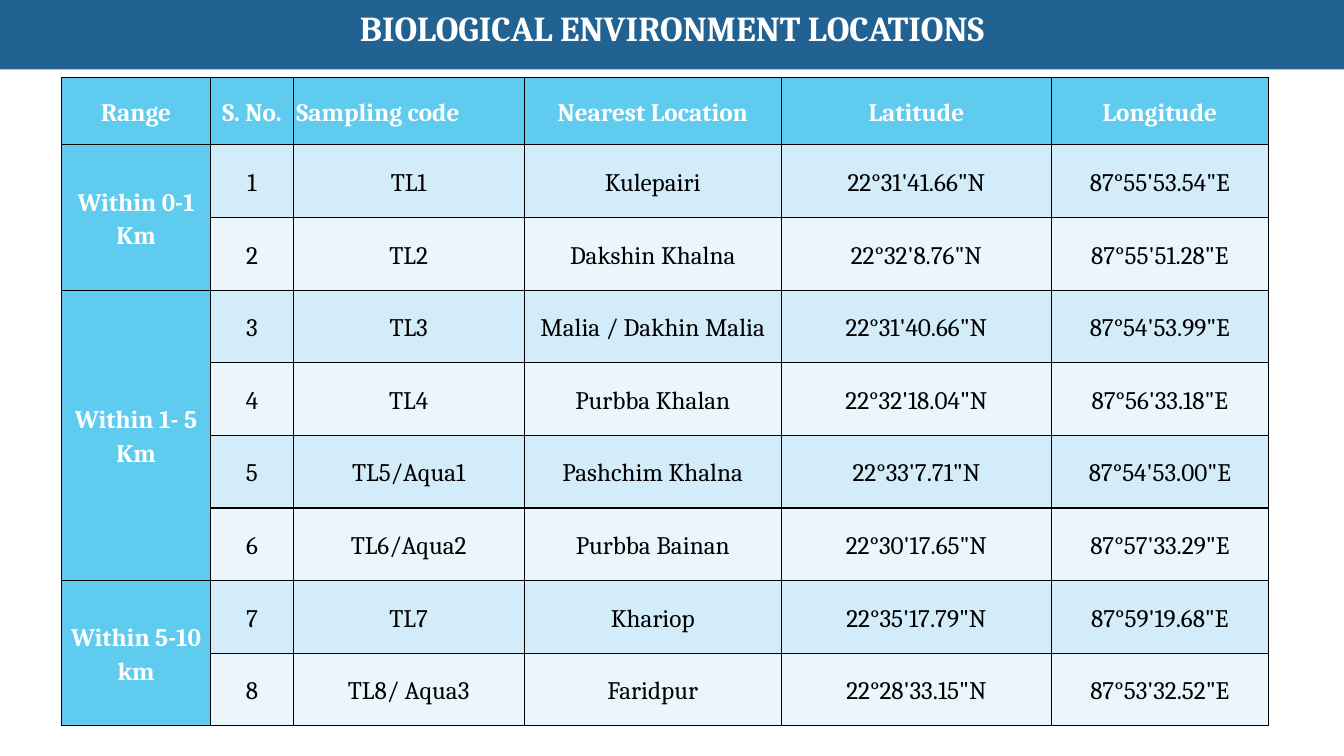
from lxml import etree
from pptx import Presentation
from pptx import util as u
from pptx.dml.color import RGBColor
from pptx.enum import text
from pptx.oxml.ns import qn

COLOURS = {
    "banner": "226292",
    "heading": "5FCBEF",
    "odd": "D2ECF9",
    "even": "EAF6FC",
    "light": "FFFFFF",
    "dark": "000000",
}

HEADINGS = ["Range", "S. No.", "Sampling code", "Nearest Location", "Latitude", "Longitude"]
COLUMN_WIDTHS = [3.76, 2.08, 5.82, 6.48, 6.81, 5.46]
HEADING_HEIGHT, ROW_HEIGHT = 1.69, 1.83

# Each range with its sampling locations
RANGES = [
    ("Within 0-1 Km", [
        ("TL1", "Kulepairi", "22°31'41.66\"N", "87°55'53.54\"E"),
        ("TL2", "Dakshin Khalna", "22°32'8.76\"N", "87°55'51.28\"E"),
    ]),
    ("Within 1- 5 Km", [
        ("TL3", "Malia / Dakhin Malia", "22°31'40.66\"N", "87°54'53.99\"E"),
        ("TL4", "Purbba Khalan", "22°32'18.04\"N", "87°56'33.18\"E"),
        ("TL5/Aqua1", "Pashchim Khalna", "22°33'7.71\"N", "87°54'53.00\"E"),
        ("TL6/Aqua2", "Purbba Bainan", "22°30'17.65\"N", "87°57'33.29\"E"),
    ]),
    ("Within 5-10 km", [
        ("TL7", "Khariop", "22°35'17.79\"N", "87°59'19.68\"E"),
        ("TL8/ Aqua3", "Faridpur", "22°28'33.15\"N", "87°53'32.52\"E"),
    ]),
]


class SlideBuilder:
    font_name = "Cambria"
    title_size = 25
    table_size = 18

    def __init__(self, presentation):
        self.slide = presentation.slides.add_slide(presentation.slide_layouts[5])

    def colour(self, name):
        return RGBColor.from_string(COLOURS[name])

    def add_run(self, paragraph, words, size, colour, bold):
        run = paragraph.add_run()
        run.text = words
        run.font.name = self.font_name
        run.font.size = u.Pt(size)
        run.font.bold = bold
        run.font.color.rgb = self.colour(colour)

    def title(self, words, left, top, width, height):
        shape = self.slide.shapes.title
        shape.left, shape.top = u.Cm(left), u.Cm(top)
        shape.width, shape.height = u.Cm(width), u.Cm(height)
        shape.fill.solid()
        shape.fill.fore_color.rgb = self.colour("banner")
        frame = shape.text_frame
        frame.auto_size = text.MSO_AUTO_SIZE.SHAPE_TO_FIT_TEXT
        frame.vertical_anchor = text.MSO_ANCHOR.MIDDLE
        paragraph = frame.paragraphs[0]
        paragraph.alignment = text.PP_ALIGN.CENTER
        self.add_run(paragraph, words, self.title_size, "light", True)

    def table(self, left, top, widths, heights):
        frame = self.slide.shapes.add_table(
            len(heights), len(widths), u.Cm(left), u.Cm(top),
            u.Cm(sum(widths)), u.Cm(sum(heights)))
        table = frame.table
        for column, width in zip(table.columns, widths):
            column.width = u.Cm(width)
        for row, height in zip(table.rows, heights):
            row.height = u.Cm(height)
        for cell in table.iter_cells():
            self.borders(cell)
        return table

    def borders(self, cell):
        properties = cell._tc.get_or_add_tcPr()
        for side in ("a:lnL", "a:lnR", "a:lnT", "a:lnB"):
            line = etree.SubElement(properties, qn(side), w=str(u.Pt(1)))
            fill = etree.SubElement(line, qn("a:solidFill"))
            etree.SubElement(fill, qn("a:srgbClr"), val=COLOURS["dark"])

    def cell(self, cell, words, fill, alignment=text.PP_ALIGN.CENTER):
        heading = fill == "heading"
        cell.fill.solid()
        cell.fill.fore_color.rgb = self.colour(fill)
        cell.vertical_anchor = text.MSO_ANCHOR.MIDDLE
        cell.margin_left = cell.margin_right = u.Cm(0.08)
        cell.margin_top = cell.margin_bottom = 0
        paragraph = cell.text_frame.paragraphs[0]
        paragraph.alignment = alignment
        paragraph.line_spacing = 1.15
        self.add_run(paragraph, words, self.table_size,
                     "light" if heading else "dark", heading)


def main():
    presentation = Presentation()
    presentation.slide_width, presentation.slide_height = u.Cm(33.87), u.Cm(19.05)
    builder = SlideBuilder(presentation)

    # Title banner
    builder.title("BIOLOGICAL ENVIRONMENT LOCATIONS", 0, 0.03, 33.87, 1.32)

    # Table grid and headings
    location_count = sum(len(locations) for _, locations in RANGES)
    heights = [HEADING_HEIGHT] + [ROW_HEIGHT] * location_count
    table = builder.table(1.55, 1.96, COLUMN_WIDTHS, heights)
    for column, heading in enumerate(HEADINGS):
        left_aligned = heading == "Sampling code"
        builder.cell(table.cell(0, column), heading, "heading",
                     text.PP_ALIGN.LEFT if left_aligned else text.PP_ALIGN.CENTER)

    # Locations, numbered in order, with one merged cell for each range
    number = 1
    for range_name, locations in RANGES:
        range_cell = table.cell(number, 0)
        range_cell.merge(table.cell(number + len(locations) - 1, 0))
        builder.cell(range_cell, range_name, "heading")
        for location in locations:
            band = "odd" if number % 2 else "even"
            for column, words in enumerate((str(number), *location), start=1):
                builder.cell(table.cell(number, column), words, band)
            number += 1

    presentation.save("out.pptx")


if __name__ == "__main__":
    main()
